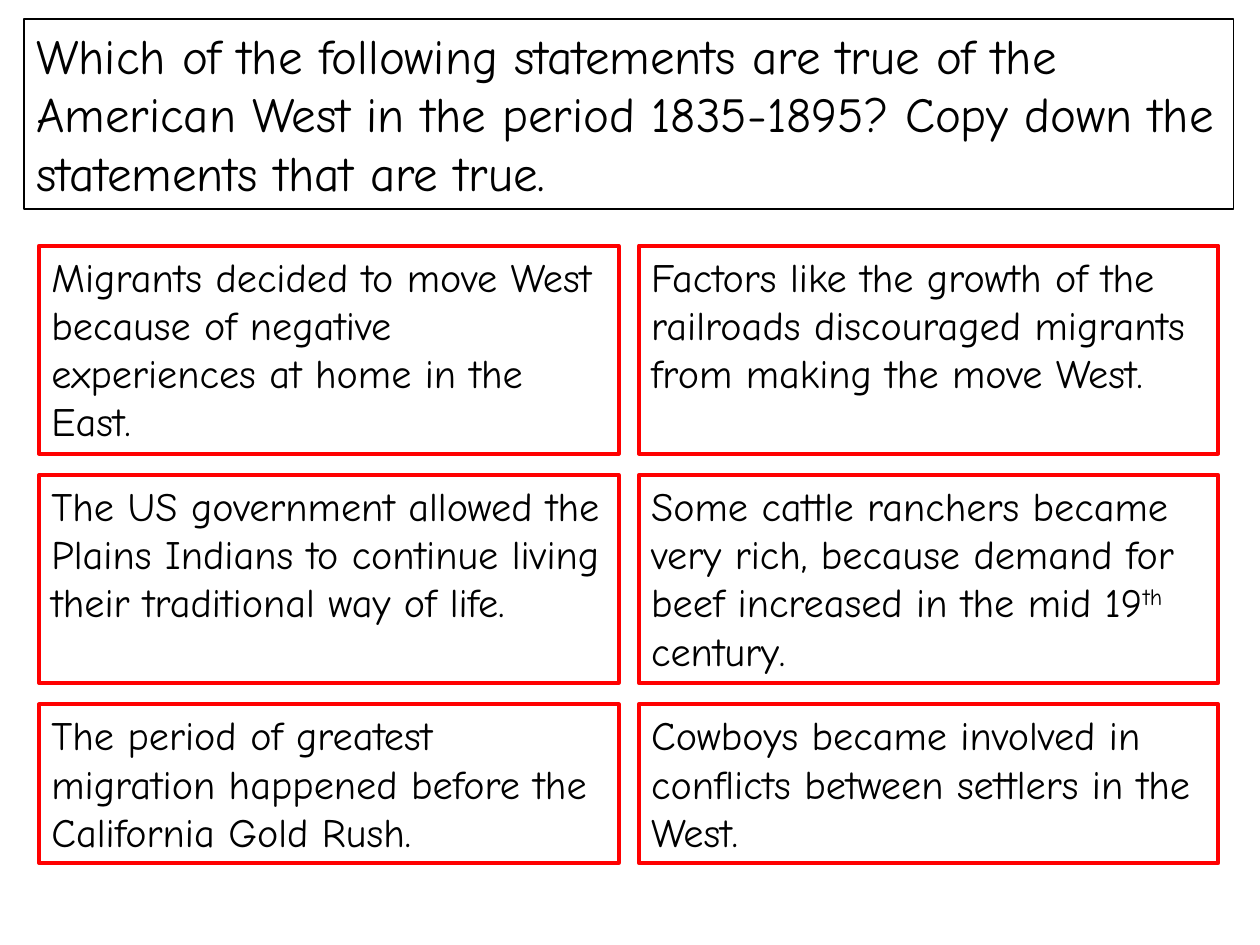
from dataclasses import dataclass

import pptx
import pptx.dml.color
import pptx.enum.text
import pptx.util
from pptx.util import Inches

COLOURS = {"text": "000000", "paper": "FFFFFF", "question": "000000", "statement": "FF0000"}
FONT = "Comic Neue"
GRID_LEFT, GRID_TOP = 0.31, 1.95
CARD_WIDTH = 4.6
COLUMN_GAP, ROW_GAP = 0.16, 0.17
ROW_HEIGHTS = (1.65, 1.65, 1.26)

QUESTION = (
    "Which of the following statements are true of the American West in the "
    "period 1835-1895? Copy down the statements that are true."
)
# A caret pair marks superscript text.
STATEMENTS = (
    (
        "Migrants decided to move West because of negative experiences at home in the East.",
        "Factors like the growth of the railroads discouraged migrants from making the move West.",
    ),
    (
        "The US government allowed the Plains Indians to continue living their traditional way of life.",
        "Some cattle ranchers became very rich, because demand for beef increased in the mid 19^th^ century.",
    ),
    (
        "The period of greatest migration happened before the California Gold Rush.",
        "Cowboys became involved in conflicts between settlers in the West.",
    ),
)


@dataclass(frozen=True)
class BoxStyle:
    border: str
    border_width: float
    font_size: float


QUESTION_STYLE = BoxStyle("question", 1, 28)
STATEMENT_STYLE = BoxStyle("statement", 2.25, 23)


def colour(name: str) -> pptx.dml.color.RGBColor:
    return pptx.dml.color.RGBColor.from_string(COLOURS[name])


def add_box(slide, left: float, top: float, width: float, height: float,
            text: str, style: BoxStyle) -> None:
    """Add a bordered text box; text between carets is superscript."""
    box = slide.shapes.add_textbox(Inches(left), Inches(top), Inches(width), Inches(height))
    box.fill.solid()
    box.fill.fore_color.rgb = colour("paper")
    box.line.color.rgb = colour(style.border)
    box.line.width = pptx.util.Pt(style.border_width)
    box.text_frame.word_wrap = True
    box.text_frame.auto_size = pptx.enum.text.MSO_AUTO_SIZE.NONE

    paragraph = box.text_frame.paragraphs[0]
    paragraph.font.name = FONT
    paragraph.font.size = pptx.util.Pt(style.font_size)
    paragraph.font.color.rgb = colour("text")
    for index, part in enumerate(text.split("^")):
        run = paragraph.add_run()
        run.text = part
        if index % 2:
            run._r.get_or_add_rPr().set("baseline", "30000")


def main() -> None:
    presentation = pptx.Presentation()
    presentation.slide_width = Inches(10)
    presentation.slide_height = Inches(7.5)
    slide = presentation.slides.add_slide(presentation.slide_layouts[6])

    add_box(slide, 0.19, 0.15, 9.6, 1.51, QUESTION, QUESTION_STYLE)
    top = GRID_TOP
    for statements, height in zip(STATEMENTS, ROW_HEIGHTS):
        for column, statement in enumerate(statements):
            left = GRID_LEFT + column * (CARD_WIDTH + COLUMN_GAP)
            add_box(slide, left, top, CARD_WIDTH, height, statement, STATEMENT_STYLE)
        top += height + ROW_GAP

    presentation.save("out.pptx")


if __name__ == "__main__":
    main()
